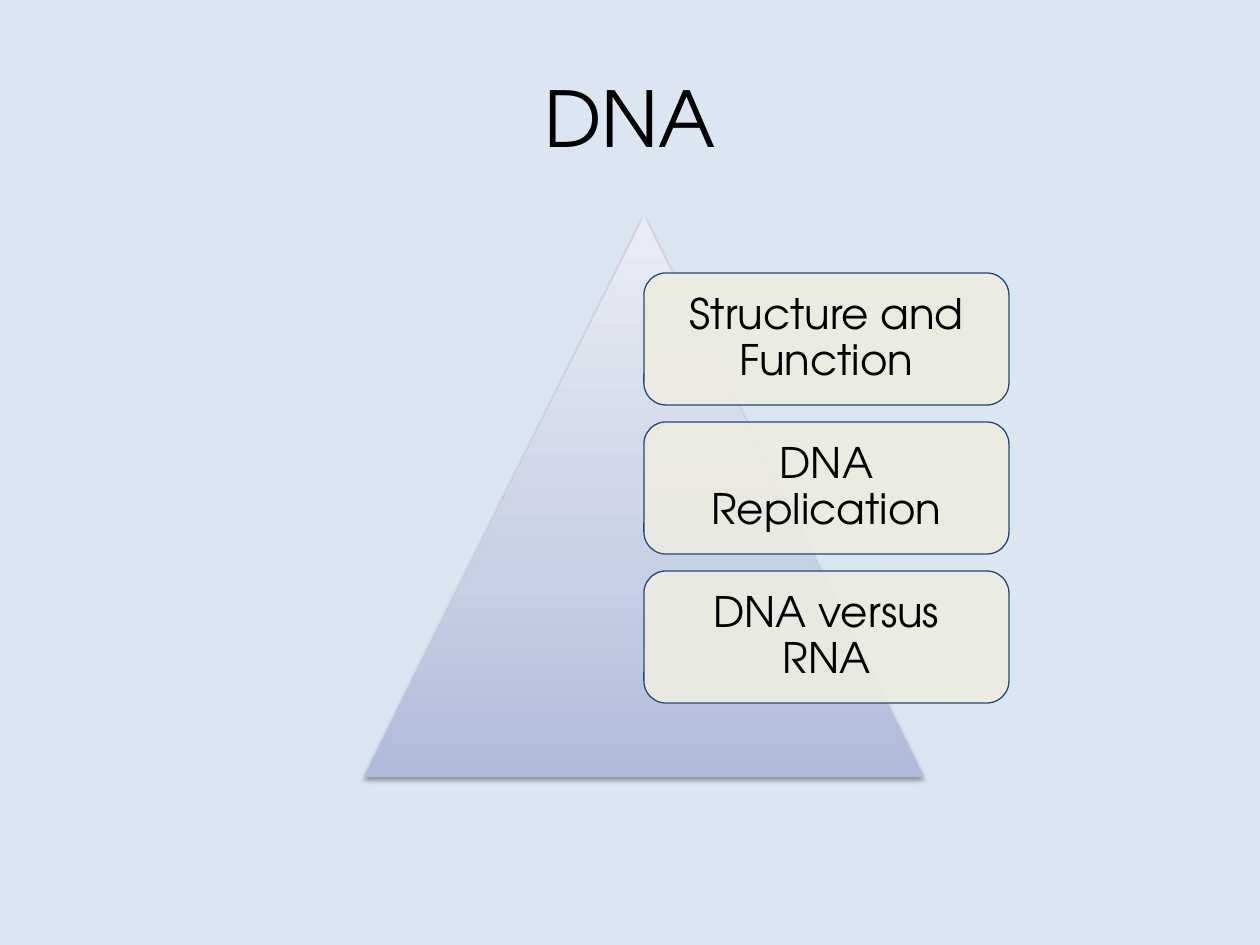
from dataclasses import dataclass

from lxml.etree import SubElement
from pptx import Presentation
from pptx.dml.color import RGBColor
from pptx.enum.shapes import MSO_SHAPE
from pptx.enum.text import MSO_ANCHOR, PP_ALIGN
from pptx.oxml import parse_xml
from pptx.oxml.ns import nsdecls, qn
from pptx.util import Pt

TITLE = "DNA"
TOPICS = ["Structure and Function", "DNA Replication", "DNA versus RNA"]

SLIDE_SIZE = (1260, 945)
TITLE_AREA = (63, 38, 1134, 158)
PYRAMID_AREA = (364, 217, 560, 560)
TOPIC_LEFT, TOPIC_TOP = 644, 273
TOPIC_WIDTH, TOPIC_HEIGHT, TOPIC_GAP = 365, 132, 17
TOPIC_INSET = 19


@dataclass(frozen=True)
class Theme:
    font: str = "TeX Gyre Adventor"
    title_size: int = 44
    topic_size: int = 24
    line_width: float = 0.75
    background: str = "DCE6F2"
    text: str = "000000"
    topic_fill: str = "EEECE1"
    topic_opacity: int = 90
    topic_line: str = "1F497D"
    pyramid_stops: tuple = ((0, "AFBBDA"), (35, "C7CFE4"), (100, "EAEDF5"))


THEME = Theme()


def px(length):
    return round(length * 914400 / 126)


def rgb(value):
    return RGBColor.from_string(value)


def write_text(frame, wording, size, inset):
    frame.word_wrap = True
    frame.vertical_anchor = MSO_ANCHOR.MIDDLE
    frame.margin_left = frame.margin_right = px(inset)
    frame.margin_top = frame.margin_bottom = px(inset)
    paragraph = frame.paragraphs[0]
    paragraph.alignment = PP_ALIGN.CENTER
    run = paragraph.add_run()
    run.text = wording
    run.font.name = THEME.font
    run.font.size = Pt(size)
    run.font.color.rgb = rgb(THEME.text)
    return paragraph


def add_title(slide):
    title = slide.shapes.add_textbox(*map(px, TITLE_AREA))
    write_text(title.text_frame, TITLE, THEME.title_size, 6)


def add_pyramid(slide):
    pyramid = slide.shapes.add_shape(
        MSO_SHAPE.ISOSCELES_TRIANGLE, *map(px, PYRAMID_AREA))
    pyramid.line.fill.background()
    stops = "".join(
        f'<a:gs pos="{position * 1000}"><a:srgbClr val="{color}"/></a:gs>'
        for position, color in THEME.pyramid_stops)
    gradient = parse_xml(
        f'<a:gradFill {nsdecls("a")} rotWithShape="1"><a:gsLst>{stops}</a:gsLst>'
        '<a:lin ang="16200000" scaled="0"/></a:gradFill>')
    shadow = parse_xml(
        f'<a:effectLst {nsdecls("a")}><a:outerShdw blurRad="{Pt(3.1)}" '
        f'dist="{Pt(1.6)}" dir="5400000" rotWithShape="0">'
        '<a:srgbClr val="000000"><a:alpha val="38000"/></a:srgbClr>'
        '</a:outerShdw></a:effectLst>')
    properties = pyramid._element.spPr
    properties.find(qn("a:prstGeom")).addnext(gradient)
    properties.append(shadow)


def add_topic(slide, index, wording):
    top = TOPIC_TOP + index * (TOPIC_HEIGHT + TOPIC_GAP)
    topic = slide.shapes.add_shape(
        MSO_SHAPE.ROUNDED_RECTANGLE,
        *map(px, (TOPIC_LEFT, top, TOPIC_WIDTH, TOPIC_HEIGHT)))
    topic.shadow.inherit = False
    topic.fill.solid()
    topic.fill.fore_color.rgb = rgb(THEME.topic_fill)
    color = topic._element.spPr.find(qn("a:solidFill")).find(qn("a:srgbClr"))
    SubElement(color, qn("a:alpha"), val=str(THEME.topic_opacity * 1000))
    topic.line.color.rgb = rgb(THEME.topic_line)
    topic.line.width = Pt(THEME.line_width)
    paragraph = write_text(
        topic.text_frame, wording, THEME.topic_size, TOPIC_INSET)
    paragraph.line_spacing = 0.9


def main():
    deck = Presentation()
    deck.slide_width, deck.slide_height = map(px, SLIDE_SIZE)
    slide = deck.slides.add_slide(deck.slide_layouts[6])
    slide.background.fill.solid()
    slide.background.fill.fore_color.rgb = rgb(THEME.background)
    add_title(slide)
    add_pyramid(slide)
    for index, wording in enumerate(TOPICS):
        add_topic(slide, index, wording)
    deck.save("out.pptx")


if __name__ == "__main__":
    main()
